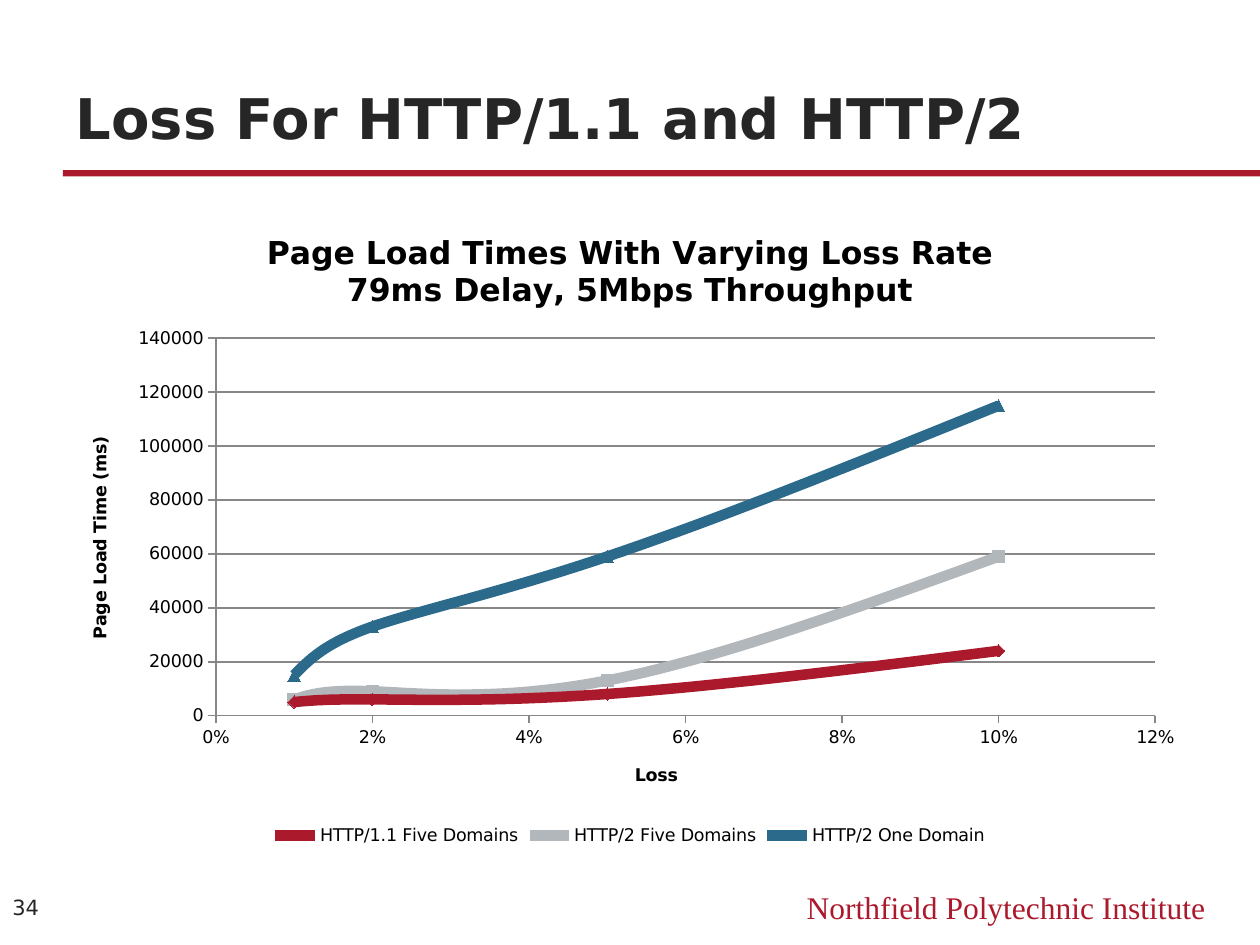
import pptx
import pptx.chart.data
import pptx.dml.color
import pptx.enum.chart
import pptx.enum.shapes
import pptx.enum.text
import pptx.util

Pt = pptx.util.Pt
Align = pptx.enum.text.PP_ALIGN
Anchor = pptx.enum.text.MSO_ANCHOR
Kind = pptx.enum.chart


class Theme:
    red, gray, blue = "AB192D", "B2B7BB", "2C6A8C"
    ink, black, grid = "262626", "000000", "878787"
    sans, serif = "DejaVu Sans", "Times New Roman"
    head, sub, foot, page, small = 32, 18, 18, 12, 10


LOSS = [0.01, 0.02, 0.05, 0.1]
MARK = Kind.XL_MARKER_STYLE
LINES = [
    ("HTTP/1.1 Five Domains", Theme.red, MARK.DIAMOND, [5000, 6000, 8000, 24000]),
    ("HTTP/2 Five Domains", Theme.gray, MARK.SQUARE, [6000, 9000, 13000, 59000]),
    ("HTTP/2 One Domain", Theme.blue, MARK.TRIANGLE, [15000, 33000, 59000, 115000]),
]


def put(item, vals):
    """Set each named value as an attribute of the item."""
    for name, val in vals.items():
        setattr(item, name, val)


def rgb(code):
    return pptx.dml.color.RGBColor.from_string(code)


def style(font, size, color, face=Theme.sans, bold=False):
    put(font, {"size": Pt(size), "name": face, "bold": bold})
    font.color.rgb = rgb(color)


def paint(fill, color):
    fill.solid()
    fill.fore_color.rgb = rgb(color)


def place(shape, left, top, width, height):
    put(shape, {"left": Pt(left), "top": Pt(top),
                "width": Pt(width), "height": Pt(height)})


def write(shape, text, size, color, face=Theme.sans, bold=False,
          align=Align.LEFT, anchor=Anchor.TOP):
    frame = shape.text_frame
    put(frame, {"word_wrap": True, "vertical_anchor": anchor,
                "auto_size": pptx.enum.text.MSO_AUTO_SIZE.NONE})
    para = frame.paragraphs[0]
    put(para, {"text": text, "alignment": align})
    style(para.runs[0].font, size, color, face, bold)


def add_rule(slide):
    shape = slide.shapes.add_shape(pptx.enum.shapes.MSO_SHAPE.RECTANGLE,
                                   Pt(36), Pt(97.2), Pt(684), Pt(3.6))
    shape.shadow.inherit = False
    paint(shape.fill, Theme.red)
    shape.line.fill.background()


def add_label(slide, box, *args, **look):
    shape = slide.shapes.add_textbox(*map(Pt, box))
    write(shape, *args, **look)


def add_title(owner, text, size):
    """Give a chart or an axis a bold title, one paragraph a line."""
    frame = (owner.chart_title if hasattr(owner, "chart_title")
             else owner.axis_title).text_frame
    frame.text = text
    for para in frame.paragraphs:
        style(para.runs[0].font, size, Theme.black, bold=True)


def set_axis(axis, title, form, top, step, grid):
    put(axis, {"minimum_scale": 0, "maximum_scale": top, "major_unit": step,
               "has_major_gridlines": grid,
               "major_tick_mark": Kind.XL_TICK_MARK.OUTSIDE,
               "minor_tick_mark": Kind.XL_TICK_MARK.NONE})
    put(axis.tick_labels, {"number_format": form, "number_format_is_linked": False})
    lines = [axis.format.line]
    if grid:
        lines.append(axis.major_gridlines.format.line)
    for line in lines:
        line.width = Pt(1)
        line.color.rgb = rgb(Theme.grid)
    add_title(axis, title, Theme.small)


def add_plot(slide):
    data = pptx.chart.data.XyChartData()
    for name, _, _, times in LINES:
        series = data.add_series(name)
        for loss, time in zip(LOSS, times):
            series.add_data_point(loss, time)
    chart = slide.shapes.add_chart(Kind.XL_CHART_TYPE.XY_SCATTER_SMOOTH,
                                   Pt(36), Pt(120), Pt(648), Pt(366), data).chart
    put(chart, {"has_title": True, "has_legend": True})
    style(chart.font, Theme.small, Theme.black)
    add_title(chart, "Page Load Times With Varying Loss Rate\n"
                     "79ms Delay, 5Mbps Throughput", Theme.sub)
    put(chart.legend, {"position": Kind.XL_LEGEND_POSITION.BOTTOM,
                       "include_in_layout": False})
    set_axis(chart.category_axis, "Loss", "0%", 0.12, 0.02, False)
    set_axis(chart.value_axis, "Page Load Time (ms)", "0", 140000, 20000, True)
    chart.plots[0].vary_by_categories = False
    for series, (_, color, mark, _) in zip(chart.plots[0].series, LINES):
        series.format.line.width = Pt(6)
        series.format.line.color.rgb = rgb(color)
        put(series.marker, {"style": mark, "size": 7})
        paint(series.marker.format.fill, color)
        series.marker.format.line.fill.background()
        # XySeries has no public smooth setting
        series._element.find(pptx.oxml.ns.qn("c:smooth")).set("val", "1")


def main():
    deck = pptx.Presentation()
    put(deck, {"slide_width": Pt(720), "slide_height": Pt(540)})
    slide = deck.slides.add_slide(deck.slide_layouts[5])
    add_rule(slide)
    add_label(slide, (432, 504, 264, 29), "Northfield Polytechnic Institute",
              Theme.foot, Theme.red, face=Theme.serif, align=Align.RIGHT)
    title = slide.shapes.title
    place(title, 36, 27, 648, 63)
    write(title, "Loss For HTTP/1.1 and HTTP/2", Theme.head, Theme.ink,
          bold=True, anchor=Anchor.BOTTOM)
    add_label(slide, (0, 503, 36, 31), "34", Theme.page, Theme.ink,
              anchor=Anchor.MIDDLE)
    add_plot(slide)
    deck.save("out.pptx")


if __name__ == "__main__":
    main()
